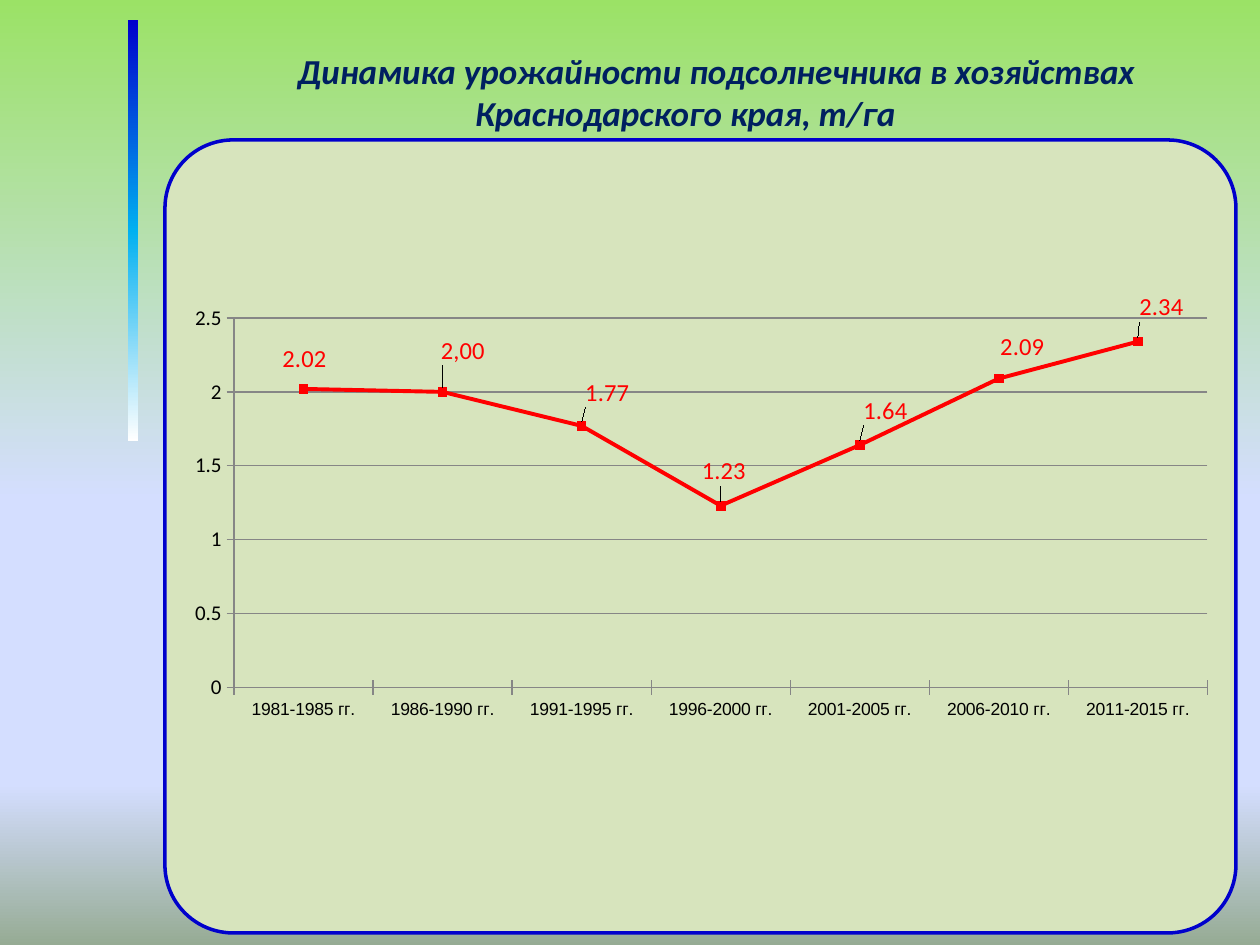
from dataclasses import dataclass

from lxml import etree
from pptx import Presentation
from pptx.chart.data import CategoryChartData
from pptx.dml.color import RGBColor
from pptx.enum.chart import XL_CHART_TYPE, XL_LABEL_POSITION, XL_MARKER_STYLE, XL_TICK_MARK
from pptx.enum.shapes import MSO_SHAPE
from pptx.enum.text import MSO_ANCHOR, MSO_AUTO_SIZE, PP_ALIGN
from pptx.oxml.ns import qn
from pptx.util import Pt

RECT, ROUND = MSO_SHAPE.RECTANGLE, MSO_SHAPE.ROUNDED_RECTANGLE
LINE, SQUARE = XL_CHART_TYPE.LINE_MARKERS, XL_MARKER_STYLE.SQUARE
ABOVE, CROSS = XL_LABEL_POSITION.ABOVE, XL_TICK_MARK.CROSS
CENTER, MIDDLE, FIXED = PP_ALIGN.CENTER, MSO_ANCHOR.MIDDLE, MSO_AUTO_SIZE.NONE
PX = 914400 // 126


@dataclass(frozen=True)
class Theme:
    sky: tuple = ((0, "9BE266"), (53, "D4DEFF"), (83, "D4DEFF"), (100, "96AB94"))
    bar: tuple = ((0, "0000CC"), (50, "00B0F0"), (100, "FFFFFF"))
    panel: str = "D7E4BD"
    edge: str = "0000CC"
    title: str = "002060"
    text: str = "000000"
    grid: str = "868686"
    curve: str = "FF0000"
    head: int = 20
    base: int = 18
    label: int = 14
    scale: int = 12
    period: int = 10
    face: str = "Calibri"
    plain: str = "Arial"


THEME = Theme()
TITLE = "Динамика урожайности подсолнечника в хозяйствах Краснодарского края, т/га"
CHART_BOX = (174, 254, 1071, 525)
PLOT = (0.056, 0.122, 0.909, 0.704)
YIELDS = (
    ("1981-1985 гг.", 2.02, (1, -6)),
    ("1986-1990 гг.", 2, (20, -17)),
    ("1991-1995 гг.", 1.77, (26, -9)),
    ("1996-2000 гг.", 1.23, (3, -10)),
    ("2001-2005 гг.", 1.64, (26, -10)),
    ("2006-2010 гг.", 2.09, (24, -7)),
    ("2011-2015 гг.", 2.34, (24, -10)),
)


def emu(box):
    return [n * PX for n in box]


def rgb(code):
    return RGBColor.from_string(code)


def style(item, **values):
    for name, value in values.items():
        setattr(item, name, value)


def type_set(font, size, color, face=THEME.face, **more):
    style(font, size=Pt(size), name=face, **more)
    font.color.rgb = rgb(color)


def stroke(line, color, width):
    line.color.rgb = rgb(color)
    line.width = Pt(width)


def blend(fill, root, stops):
    fill.gradient()
    fill.gradient_angle = 270
    group = next(root.iter(qn("a:gsLst")))
    for old in list(group):
        group.remove(old)
    for place, color in stops:
        stop = etree.SubElement(group, qn("a:gs"), pos=str(place * 1000))
        etree.SubElement(stop, qn("a:srgbClr"), val=color)


def add_box(slide, kind, box):
    shape = slide.shapes.add_shape(kind, *emu(box))
    shape.shadow.inherit = False
    return shape


def add_bar(slide):
    bar = add_box(slide, RECT, (128, 20, 10, 421))
    blend(bar.fill, bar._element, THEME.bar)
    bar.line.fill.background()


def add_panel(slide):
    panel = add_box(slide, ROUND, (165, 140, 1071, 793))
    panel.adjustments[0] = 0.086
    panel.fill.solid()
    panel.fill.fore_color.rgb = rgb(THEME.panel)
    stroke(panel.line, THEME.edge, 2)


def set_title(slide):
    title = slide.shapes.title
    style(title, **dict(zip(("left", "top", "width", "height"), emu((137, 43, 1097, 97)))))
    frame = title.text_frame
    style(frame, text=TITLE, word_wrap=True, auto_size=FIXED, vertical_anchor=MIDDLE)
    para = frame.paragraphs[0]
    para.alignment = CENTER
    para._p.get_or_add_pPr().set("indent", str(62 * PX))
    type_set(para.runs[0].font, THEME.head, THEME.title, bold=True, italic=True)


def place(layout, names, values):
    manual = etree.SubElement(layout, qn("c:manualLayout"))
    for name, value in zip(names, values):
        etree.SubElement(manual, qn("c:" + name), val=str(value))


def set_axis(axis, size, face):
    style(axis, major_tick_mark=CROSS)
    type_set(axis.tick_labels.font, size, THEME.text, face)
    stroke(axis.format.line, THEME.grid, 0.75)


def set_label(series, index, value, shift):
    label = series.points[index].data_label
    if value == 2:
        label.text_frame.text = "2,00"
        font = label.text_frame.paragraphs[0].runs[0].font
    else:
        font = label.font
    type_set(font, THEME.label, THEME.curve)
    label.position = ABOVE
    node = next(n for n in series._element.iter(qn("c:dLbl"))
                if n.find(qn("c:idx")).get("val") == str(index))
    layout = node.find(qn("c:layout"))
    if layout is None:
        layout = etree.Element(qn("c:layout"))
        node.insert(1, layout)
    parts = [round(n / full, 3) for n, full in zip(shift, CHART_BOX[2:])]
    place(layout, ("x", "y"), parts)


def set_plot(chart):
    area = chart._chartSpace.chart.plotArea
    layout = area.find(qn("c:layout"))
    if layout is None:
        layout = etree.Element(qn("c:layout"))
        area.insert(0, layout)
    names = ("layoutTarget", "xMode", "yMode", "x", "y", "w", "h")
    place(layout, names, ("inner", "edge", "edge", *PLOT))


def add_graph(slide):
    data = CategoryChartData()
    data.categories = [period for period, _, _ in YIELDS]
    data.add_series("Series 1", [value for _, value, _ in YIELDS])
    chart = slide.shapes.add_chart(LINE, *emu(CHART_BOX), data).chart
    style(chart, has_legend=False, has_title=False)
    type_set(chart.font, THEME.base, THEME.text)
    set_plot(chart)
    set_axis(chart.category_axis, THEME.period, THEME.plain)
    axis = chart.value_axis
    set_axis(axis, THEME.scale, THEME.face)
    style(axis, minimum_scale=0, maximum_scale=2.5, major_unit=0.5, has_major_gridlines=True)
    stroke(axis.major_gridlines.format.line, THEME.grid, 0.75)
    chart.plots[0].vary_by_categories = False
    series = chart.plots[0].series[0]
    series.smooth = False
    stroke(series.format.line, THEME.curve, 2.25)
    marker = series.marker
    style(marker, style=SQUARE, size=5)
    marker.format.fill.solid()
    marker.format.fill.fore_color.rgb = rgb(THEME.curve)
    stroke(marker.format.line, THEME.curve, 0.75)
    type_set(series.data_labels.font, THEME.label, THEME.curve)
    style(series.data_labels, show_value=True, position=ABOVE)
    for index, (_, value, shift) in enumerate(YIELDS):
        set_label(series, index, value, shift)


def main():
    deck = Presentation()
    style(deck, slide_width=1260 * PX, slide_height=945 * PX)
    slide = deck.slides.add_slide(deck.slide_layouts[5])
    blend(slide.background.fill, slide._element, THEME.sky)
    add_bar(slide)
    add_panel(slide)
    set_title(slide)
    add_graph(slide)
    deck.save("out.pptx")


if __name__ == "__main__":
    main()
